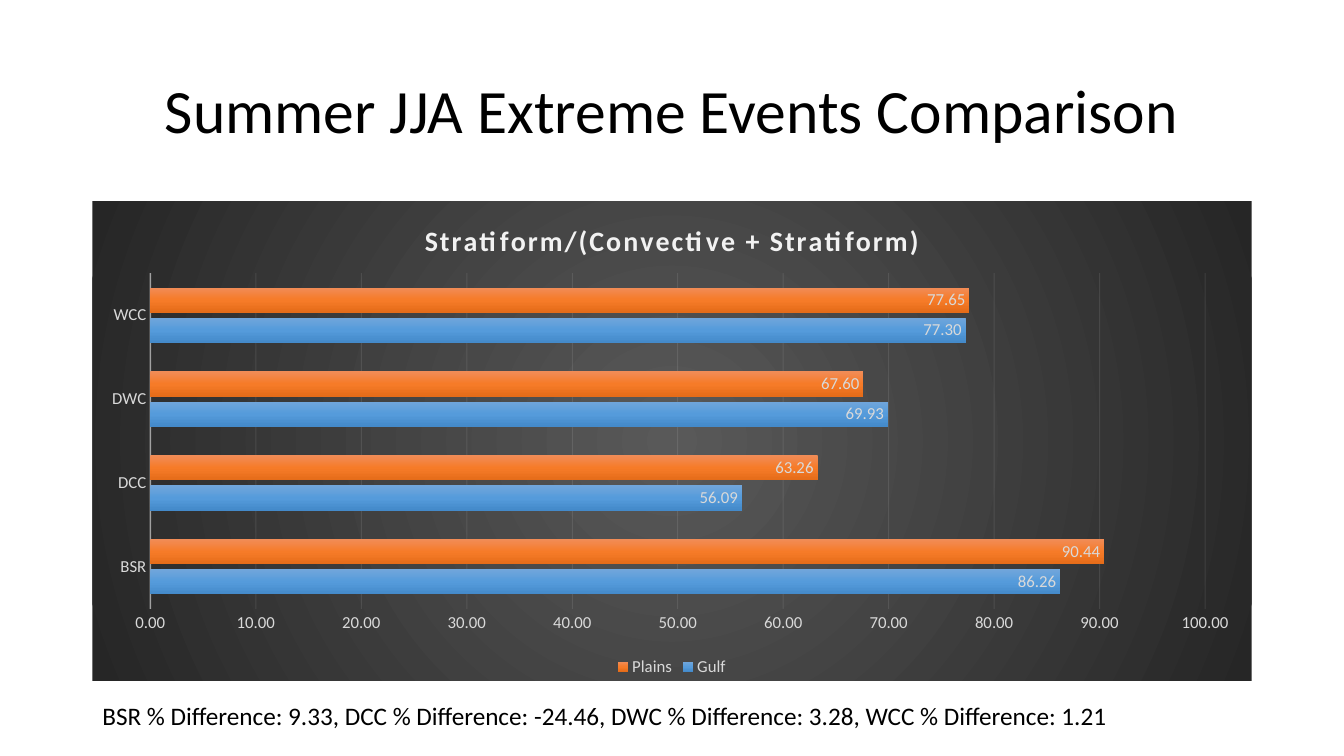
from lxml import etree
from pptx import Presentation
from pptx.chart.data import CategoryChartData
from pptx.dml.color import RGBColor
from pptx.enum.chart import XL_CHART_TYPE, XL_LABEL_POSITION, XL_LEGEND_POSITION, XL_TICK_MARK
from pptx.enum.text import MSO_ANCHOR, PP_ALIGN
from pptx.oxml import parse_xml
from pptx.oxml.ns import nsdecls, qn
from pptx.util import Cm, Pt

BARS = XL_CHART_TYPE.BAR_CLUSTERED
INSIDE_END = XL_LABEL_POSITION.INSIDE_END
BOTTOM = XL_LEGEND_POSITION.BOTTOM
NO_TICK = XL_TICK_MARK.NONE
CENTER, LEFT = PP_ALIGN.CENTER, PP_ALIGN.LEFT
MIDDLE, TOP = MSO_ANCHOR.MIDDLE, MSO_ANCHOR.TOP

FONT = "Calibri"
NUMBER_FORMAT = "0.00"
COLORS = {"text": "000000", "chart_title": "F2F2F2", "label": "D9D9D9", "line": "F2F2F2"}
BACKGROUND = [(0, "595959"), (100, "262626")]
RADIAL = '<a:path path="circle"><a:fillToRect l="50000" t="50000" r="50000" b="50000"/></a:path>'
DOWNWARD = '<a:lin ang="5400000" scaled="0"/>'

CATEGORIES = ["BSR", "DCC", "DWC", "WCC"]
SERIES = [
    ("Gulf", [86.26, 56.09, 69.93, 77.30], [(0, "71A6DB"), (50, "559BDB"), (100, "448ACA")]),
    ("Plains", [90.44, 63.26, 67.60, 77.65], [(0, "F18C57"), (50, "F67B28"), (100, "E56C19")]),
]


def style_font(font, size, color, bold=False):
    font.name, font.size, font.bold = FONT, Pt(size), bold
    font.color.rgb = RGBColor.from_string(COLORS[color])


def write_text(frame, text, size=18, color="text", bold=False, align=LEFT, spacing=None):
    para = frame.paragraphs[0]
    para.alignment = align
    if spacing:
        para.line_spacing = spacing
    span = para.add_run()
    span.text = text
    style_font(span.font, size, color, bold)
    return span


def gradient(stops, direction):
    marks = "".join(
        f'<a:gs pos="{position * 1000}"><a:srgbClr val="{color}"/></a:gs>'
        for position, color in stops
    )
    return parse_xml(
        f'<a:gradFill {nsdecls("a")} rotWithShape="1"><a:gsLst>{marks}</a:gsLst>{direction}</a:gradFill>'
    )


def style_line(line, owner, width, opacity):
    """Colour a line and make its colour, found under owner, see-through."""
    line.width = Pt(width)
    line.color.rgb = RGBColor.from_string(COLORS["line"])
    color = owner.find(f".//{qn('c:spPr')}/{qn('a:ln')}//{qn('a:srgbClr')}")
    etree.SubElement(color, qn("a:alpha")).set("val", str(opacity * 1000))


def fill_chart_background(chart):
    properties = parse_xml(f'<c:spPr {nsdecls("c", "a")}><a:ln><a:noFill/></a:ln></c:spPr>')
    properties.insert(0, gradient(BACKGROUND, RADIAL))
    chart._chartSpace.find(qn("c:chart")).addnext(properties)


def place_plot(chart, x, y, w, h):
    """Fix the inner plot area, in fractions of the chart."""
    plot_area = chart._chartSpace.find(f".//{qn('c:plotArea')}")
    for old in plot_area.findall(qn("c:layout")):
        plot_area.remove(old)
    sizes = "".join(f'<c:{name} val="{value}"/>' for name, value in zip("xywh", (x, y, w, h)))
    plot_area.insert(0, parse_xml(
        f'<c:layout {nsdecls("c")}><c:manualLayout><c:layoutTarget val="inner"/>'
        f'<c:xMode val="edge"/><c:yMode val="edge"/>{sizes}</c:manualLayout></c:layout>'
    ))


def style_axes(chart):
    category_axis, value_axis = chart.category_axis, chart.value_axis
    for axis in (category_axis, value_axis):
        axis.major_tick_mark = axis.minor_tick_mark = NO_TICK
        style_font(axis.tick_labels.font, 12, "label")
    category_axis.has_major_gridlines = False
    style_line(category_axis.format.line, category_axis._element, 1, 54)

    value_axis.minimum_scale, value_axis.maximum_scale, value_axis.major_unit = 0, 100, 10
    value_axis.tick_labels.number_format = NUMBER_FORMAT
    value_axis.tick_labels.number_format_is_linked = False
    value_axis.has_major_gridlines = True
    gridlines = value_axis._element.find(qn("c:majorGridlines"))
    style_line(value_axis.major_gridlines.format.line, gridlines, 0.75, 10)
    value_axis.format.line.fill.background()


def style_series(series, stops):
    series.format.line.fill.background()
    series._element.get_or_add_spPr().insert(0, gradient(stops, DOWNWARD))
    series.invert_if_negative = False
    labels = series.data_labels
    labels.show_value = True
    labels.position = INSIDE_END
    labels.number_format, labels.number_format_is_linked = NUMBER_FORMAT, False
    style_font(labels.font, 12, "label")


def add_title(page, box):
    title = page.shapes.title
    title.left, title.top, title.width, title.height = box
    title.text_frame.vertical_anchor = MIDDLE
    write_text(title.text_frame, "Summer JJA Extreme Events Comparison",
               size=44, align=CENTER, spacing=0.9)


def add_ratio_chart(page, box):
    data = CategoryChartData(number_format=NUMBER_FORMAT)
    data.categories = CATEGORIES
    for name, values, _ in SERIES:
        data.add_series(name, values)
    chart = page.shapes.add_chart(BARS, *box, data).chart
    style_font(chart.font, 10, "text")
    fill_chart_background(chart)

    chart.has_title = True
    span = write_text(chart.chart_title.text_frame, "Stratiform/(Convective + Stratiform)",
                      size=20, color="chart_title", bold=True, align=CENTER)
    span.font._element.set("spc", "133")
    chart.chart_title.include_in_layout = False

    chart.has_legend = True
    chart.legend.position = BOTTOM
    chart.legend.include_in_layout = False
    style_font(chart.legend.font, 12, "label")

    plot = chart.plots[0]
    plot.gap_width, plot.overlap, plot.vary_by_categories = 115, -20, False
    for series, (_, _, stops) in zip(plot.series, SERIES):
        style_series(series, stops)
    style_axes(chart)
    place_plot(chart, 0.05, 0.15, 0.91, 0.7)


def add_differences(page, box):
    frame = page.shapes.add_textbox(*box).text_frame
    frame.word_wrap = True
    frame.vertical_anchor = TOP
    write_text(frame, "BSR % Difference: 9.33, DCC % Difference: -24.46, "
                      "DWC % Difference: 3.28, WCC % Difference: 1.21")


def main():
    deck = Presentation()
    deck.slide_width, deck.slide_height = Cm(33.87), Cm(19.05)
    page = deck.slides.add_slide(deck.slide_layouts[5])
    left, width = Cm(2.33), Cm(29.21)
    add_title(page, (left, Cm(1.01), width, Cm(3.68)))
    add_ratio_chart(page, (left, Cm(5.07), width, Cm(12.09)))
    add_differences(page, (left, Cm(17.53), Cm(28.58), Cm(1.03)))
    deck.save("out.pptx")


if __name__ == "__main__":
    main()
